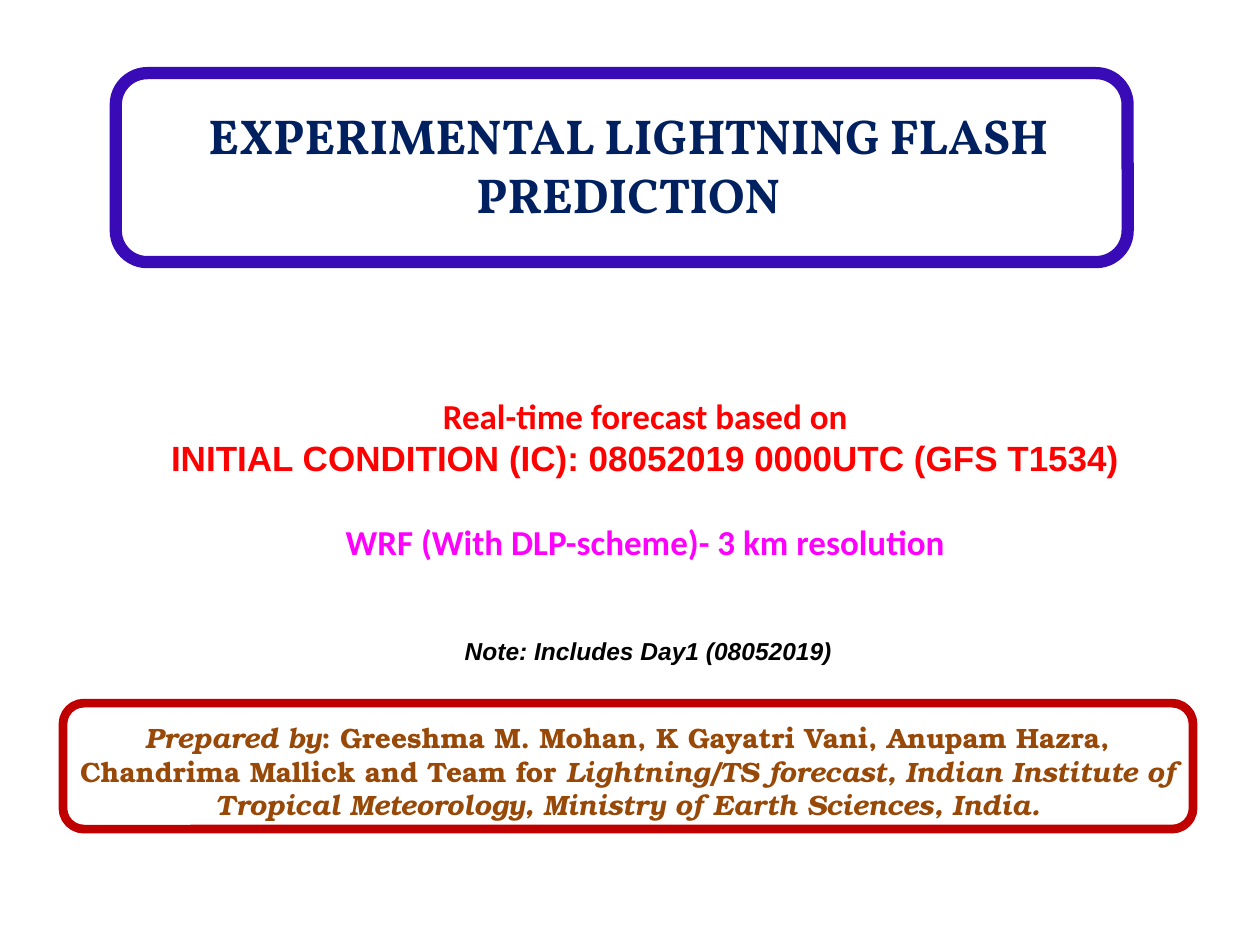
from pptx import Presentation
from pptx.dml.color import RGBColor
from pptx.enum.shapes import MSO_SHAPE as Shape
from pptx.enum.text import MSO_ANCHOR as Anchor, MSO_AUTO_SIZE as AutoSize, PP_ALIGN as Align
from pptx.util import Pt


def color(hex_code):
    return RGBColor.from_string(hex_code)


def place(item, left, top, width, height):
    item.left, item.top, item.width, item.height = map(Pt, (left, top, width, height))


def style(para, font_name, size, hex_code, italic=None):
    """Centre a paragraph and give it a bold font."""
    para.alignment = Align.CENTER
    font = para.font
    font.name, font.size, font.bold, font.italic = font_name, Pt(size), True, italic
    font.color.rgb = color(hex_code)


def prepare(frame):
    frame.word_wrap = True
    frame.auto_size = AutoSize.NONE
    frame.vertical_anchor = Anchor.TOP


def add_title(page, text):
    title = page.shapes.title
    place(title, 67, 56.9, 584, 75)
    prepare(title.text_frame)
    title.text_frame.text = text
    style(title.text_frame.paragraphs[0], "Vollkorn", 28, "002060")


def add_text_box(page, left, top, width, height):
    box = page.shapes.add_textbox(*map(Pt, (left, top, width, height)))
    prepare(box.text_frame)
    return box.text_frame


def add_lines(frame, lines):
    """Fill a text frame with (text, font, colour, space before) lines."""
    for index, (text, font_name, hex_code, gap) in enumerate(lines):
        para = frame.add_paragraph() if index else frame.paragraphs[0]
        para.text = text
        style(para, font_name, 20, hex_code)
        if gap:
            para.space_before = Pt(gap)


def add_frame(page, left, top, width, height, hex_code, weight):
    """Draw an unfilled rounded border."""
    border = page.shapes.add_shape(
        Shape.ROUNDED_RECTANGLE, *map(Pt, (left, top, width, height)))
    border.shadow.inherit = False
    border.fill.background()
    border.line.color.rgb = color(hex_code)
    border.line.width = Pt(weight)


def main():
    deck = Presentation()
    deck.slide_width, deck.slide_height = Pt(720), Pt(540)
    page = deck.slides.add_slide(deck.slide_layouts[5])

    # Framed title
    add_title(page, "EXPERIMENTAL LIGHTNING FLASH PREDICTION")
    add_frame(page, 66.2, 41.8, 578.2, 108, "380BB7", 7)

    # Forecast basis
    add_lines(add_text_box(page, 41.8, 221.8, 653.8, 104.4), [
        ("Real-time forecast based on", "Calibri", "FF0000", 0),
        ("INITIAL CONDITION (IC): 08052019 0000UTC (GFS T1534)", "Arial", "FF0000", 0),
        ("WRF (With DLP-scheme)- 3 km resolution", "Calibri", "FF00FF", 24),
    ])

    # Note
    note = add_text_box(page, 41.8, 360, 657.4, 24.5)
    note.text = "Note: Includes Day1 (08052019)"
    style(note.paragraphs[0], "Arial", 14, "000000", italic=True)

    # Framed credits
    para = add_text_box(page, 30.2, 408.2, 657.4, 65.5).paragraphs[0]
    style(para, "TeX Gyre Bonum", 16, "984807")
    for text, italic in [
        ("Prepared by", True),
        (": Greeshma M. Mohan, K Gayatri Vani, Anupam Hazra, "
         "Chandrima Mallick and Team for ", False),
        ("Lightning/TS forecast, Indian Institute of Tropical Meteorology, "
         "Ministry of Earth Sciences, India.", True),
    ]:
        span = para.add_run()
        span.text = text
        span.font.italic = italic
    add_frame(page, 36, 401.8, 645.8, 72, "C00000", 5)

    deck.save("out.pptx")


if __name__ == "__main__":
    main()
